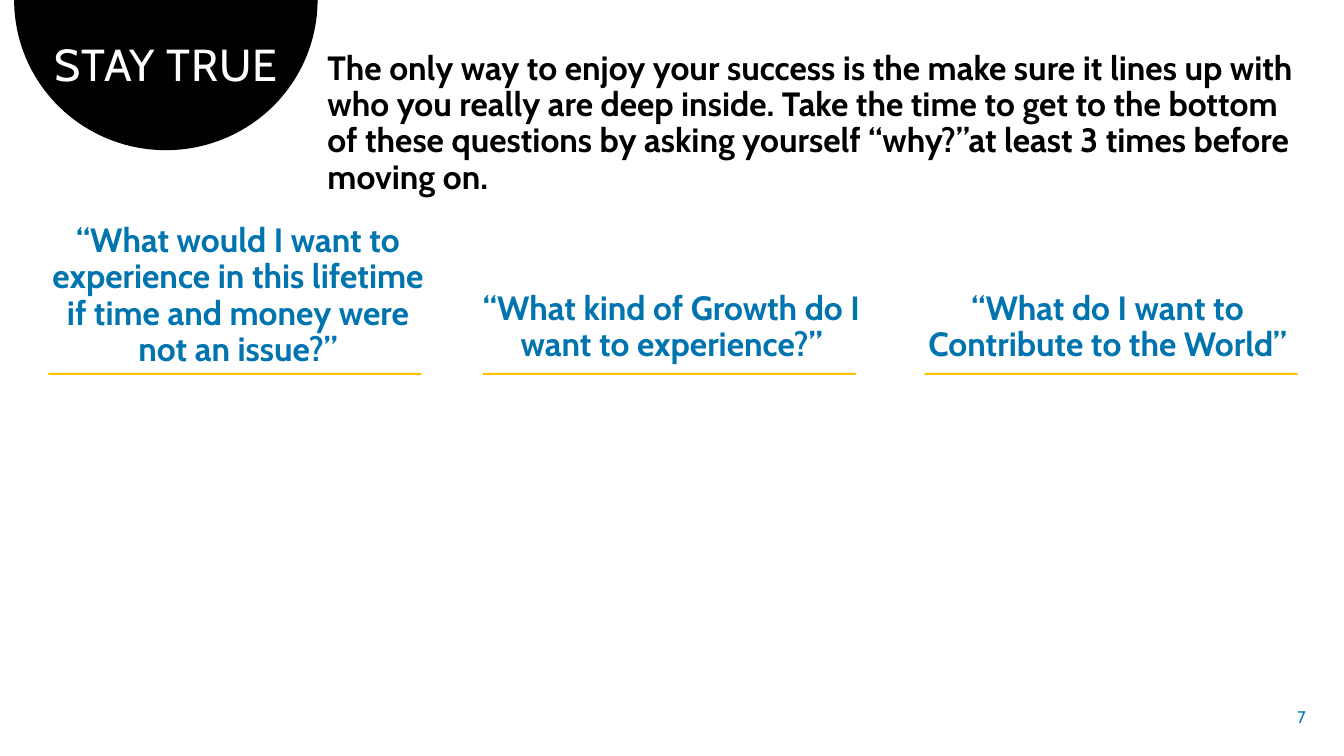
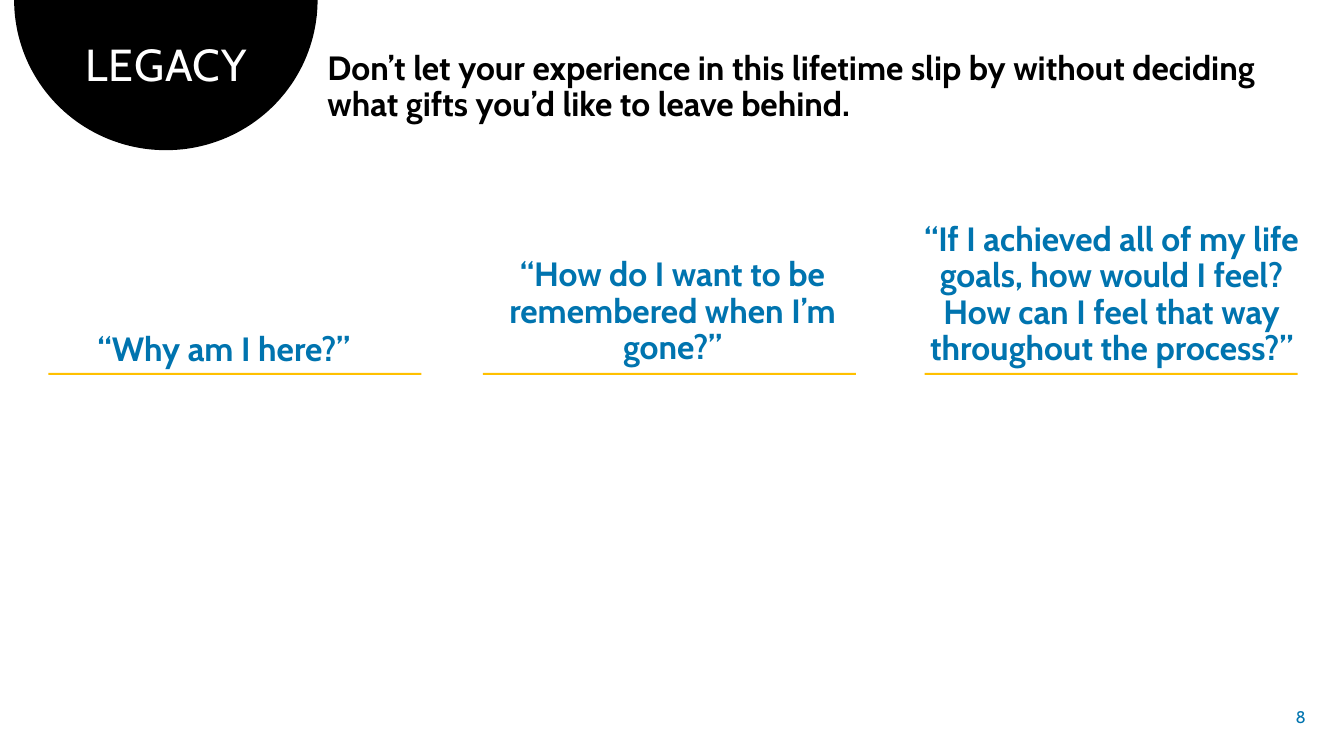
import math

import pptx
import pptx.dml.color
import pptx.enum.shapes
import pptx.enum.text
import pptx.util

PX = 9144  # 100 px to the inch
SLIDE_WIDTH, SLIDE_HEIGHT = 1333, 750

BLACK = pptx.dml.color.RGBColor(0x00, 0x00, 0x00)
WHITE = pptx.dml.color.RGBColor(0xFF, 0xFF, 0xFF)
BLUE = pptx.dml.color.RGBColor(0x00, 0x74, 0xAF)
GOLD = pptx.dml.color.RGBColor(0xFF, 0xC0, 0x00)

FONT = "Cabin"
ALIGN = pptx.enum.text.PP_ALIGN
ANCHOR = pptx.enum.text.MSO_ANCHOR

BADGE_BOX = (14, 0, 301, 149)
INTRO_BOX = (315, 46, 993)
NUMBER_BOX = (1250, 691, 55, 40)
RULE_LEFTS = (48, 479, 917)
RULE_TOP, RULE_WIDTH, RULE_HEIGHT = 370, 370, 2
QUESTION_WIDTHS = (406, 420, 413)
LINE_HEIGHT, TEXT_PADDING = 36.5, 10

# Each question: text, number of lines, left edge, bottom edge
SLIDES = [
    {
        "title": "STAY TRUE",
        "number": 7,
        "intro": "The only way to enjoy your success is the make sure it lines up with "
                 "who you really are deep inside. Take the time to get to the bottom of "
                 "these questions by asking yourself “why?”at least 3 times before "
                 "moving on.",
        "intro_lines": 4,
        "questions": [
            ("“What would I want to experience in this lifetime if time and money "
             "were not an issue?”", 4, 33, 373),
            ("“What kind of Growth do I want to experience?”", 2, 456, 367),
            ("“What do I want to Contribute to the World”", 2, 892, 367),
        ],
    },
    {
        "title": "LEGACY",
        "number": 8,
        "intro": "Don’t let your experience in this lifetime slip by without deciding "
                 "what gifts you’d like to leave behind.",
        "intro_lines": 2,
        "questions": [
            ("“Why am I here?”", 1, 19, 371),
            ("“How do I want to be remembered when I’m gone?”", 3, 457, 371),
            ("“If I achieved all of my life goals, how would I feel? How can I feel "
             "that way throughout the process?”", 4, 896, 372),
        ],
    },
]


def emu(*lengths):
    return [pptx.util.Emu(round(length * PX)) for length in lengths]


def text_height(lines):
    return round(lines * LINE_HEIGHT + TEXT_PADDING)


def write_text(shape, text, size=24, color=BLACK, bold=False, align=ALIGN.LEFT,
               anchor=ANCHOR.TOP, line_spacing=0.9, tracking=None):
    """Fill a shape with one formatted paragraph; tracking is in points."""
    frame = shape.text_frame
    frame.word_wrap = True
    frame.auto_size = pptx.enum.text.MSO_AUTO_SIZE.NONE
    frame.vertical_anchor = anchor
    paragraph = frame.paragraphs[0]
    paragraph.alignment = align
    paragraph.line_spacing = line_spacing
    run = paragraph.add_run()
    run.text = text
    run.font.name = FONT
    run.font.size = pptx.util.Pt(size)
    run.font.bold = bold
    run.font.color.rgb = color
    if tracking is not None:
        run.font._element.set("spc", str(round(tracking * 100)))


def paint(shape, color):
    shape.shadow.inherit = False
    shape.fill.solid()
    shape.fill.fore_color.rgb = color
    shape.line.fill.background()


def add_text(slide, box, text, **text_format):
    write_text(slide.shapes.add_textbox(*emu(*box)), text, **text_format)


def add_title_badge(slide, box, text):
    """Place the title on a half disc that hangs from the top of the box."""
    left, top, width, height = box
    steps = 90
    arc = []
    for step in range(steps + 1):
        angle = math.pi * step / steps
        arc.append(emu(left + width / 2 * (1 + math.cos(angle)),
                       top + height * math.sin(angle)))
    builder = slide.shapes.build_freeform(*arc[0], scale=1.0)
    builder.add_line_segments(arc[1:], close=True)
    disc = builder.convert_to_shape()
    paint(disc, BLACK)

    title = slide.shapes.title
    title.left, title.top, title.width, title.height = emu(
        left + 21, top + 37, width - 41, 59)
    write_text(title, text, size=32, color=WHITE, align=ALIGN.CENTER, tracking=0.6)
    title.element.addprevious(disc.element)


def add_questions(slide, questions):
    """Place each question so that it ends at the rule of its column."""
    columns = zip(questions, RULE_LEFTS, QUESTION_WIDTHS)
    for (text, lines, left, bottom), rule_left, width in columns:
        height = text_height(lines)
        add_text(slide, (left, bottom - height, width, height), text,
                 color=BLUE, bold=True, align=ALIGN.CENTER)
        rule = slide.shapes.add_shape(
            pptx.enum.shapes.MSO_SHAPE.RECTANGLE,
            *emu(rule_left, RULE_TOP, RULE_WIDTH, RULE_HEIGHT))
        paint(rule, GOLD)


def add_question_slide(presentation, content):
    slide = presentation.slides.add_slide(presentation.slide_layouts[5])
    add_title_badge(slide, BADGE_BOX, content["title"])
    add_text(slide, (*INTRO_BOX, text_height(content["intro_lines"])),
             content["intro"], bold=True)
    add_questions(slide, content["questions"])
    add_text(slide, NUMBER_BOX, str(content["number"]), size=12, color=BLUE,
             align=ALIGN.RIGHT, anchor=ANCHOR.MIDDLE, line_spacing=1.0)


def main():
    presentation = pptx.Presentation()
    presentation.slide_width, presentation.slide_height = emu(SLIDE_WIDTH, SLIDE_HEIGHT)
    for content in SLIDES:
        add_question_slide(presentation, content)
    presentation.save("out.pptx")


if __name__ == "__main__":
    main()
